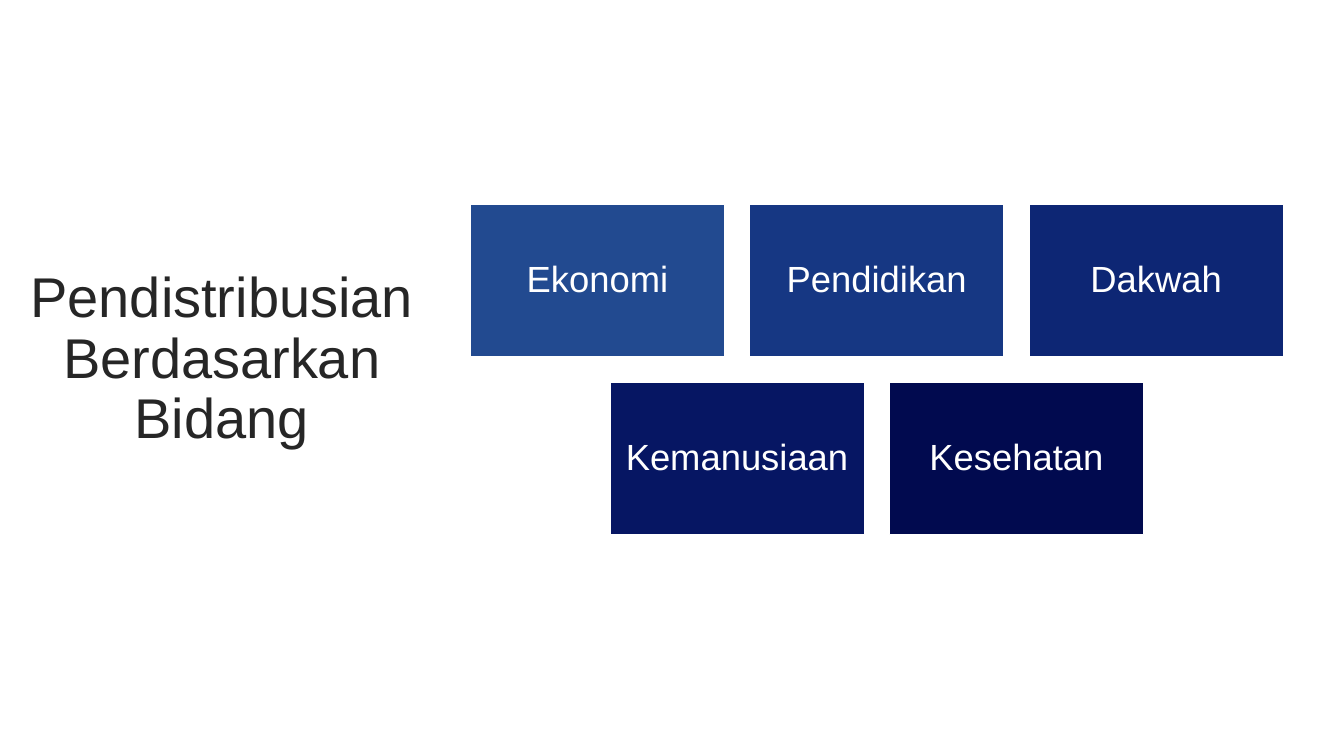
from pptx import Presentation
from pptx.dml.color import RGBColor
from pptx.enum.shapes import MSO_SHAPE
from pptx.enum.text import MSO_ANCHOR, PP_ALIGN
from pptx.util import Cm, Pt


def color(hex_value):
    return RGBColor.from_string(hex_value)


class SlideBuilder:
    """Holds the shared style and the current slide."""

    font_name = "Arial"
    dark = "262626"
    light = "FFFFFF"

    def __init__(self, slide):
        self.slide = slide

    def set_text(self, shape, text, size, text_color):
        frame = shape.text_frame
        frame.word_wrap = True
        frame.vertical_anchor = MSO_ANCHOR.MIDDLE
        paragraph = frame.paragraphs[0]
        paragraph.text = text
        paragraph.alignment = PP_ALIGN.CENTER
        paragraph.line_spacing = 0.9
        paragraph.font.name = self.font_name
        paragraph.font.size = Pt(size)
        paragraph.font.color.rgb = color(text_color)
        return paragraph

    def heading(self, text, left, top, width, height):
        box = self.slide.shapes.add_textbox(
            Cm(left), Cm(top), Cm(width), Cm(height))
        self.set_text(box, text, 40, self.dark).space_before = Pt(10)

    def tile(self, text, fill, left, top, width, height):
        box = self.slide.shapes.add_shape(
            MSO_SHAPE.RECTANGLE, Cm(left), Cm(top), Cm(width), Cm(height))
        box.shadow.inherit = False
        box.fill.solid()
        box.fill.fore_color.rgb = color(fill)
        box.line.color.rgb = color(self.light)
        box.line.width = Pt(1)
        frame = box.text_frame
        frame.margin_left = frame.margin_right = Cm(0.28)
        frame.margin_top = frame.margin_bottom = Cm(0.28)
        self.set_text(box, text, 26, self.light).space_after = Pt(9)


def main():
    presentation = Presentation()
    presentation.slide_width = Cm(33.87)
    presentation.slide_height = Cm(19.05)
    blank = presentation.slide_layouts[6]
    builder = SlideBuilder(presentation.slides.add_slide(blank))

    # Heading on the left
    builder.heading("Pendistribusian Berdasarkan Bidang",
                    0.38, 4.93, 10.41, 8.28)

    # Fields in centred rows on the right
    field_rows = [
        [("Ekonomi", "224A90"), ("Pendidikan", "163783"), ("Dakwah", "0D2674")],
        [("Kemanusiaan", "061663"), ("Kesehatan", "010A4F")],
    ]
    tile_width, tile_height, gap = 6.41, 3.84, 0.63
    rows_center, rows_top = 22.1, 5.16
    for row, fields in enumerate(field_rows):
        row_width = len(fields) * (tile_width + gap) - gap
        row_left = rows_center - row_width / 2
        top = rows_top + row * (tile_height + gap)
        for column, (field, fill) in enumerate(fields):
            left = row_left + column * (tile_width + gap)
            builder.tile(field, fill, left, top, tile_width, tile_height)

    presentation.save("out.pptx")


if __name__ == "__main__":
    main()
